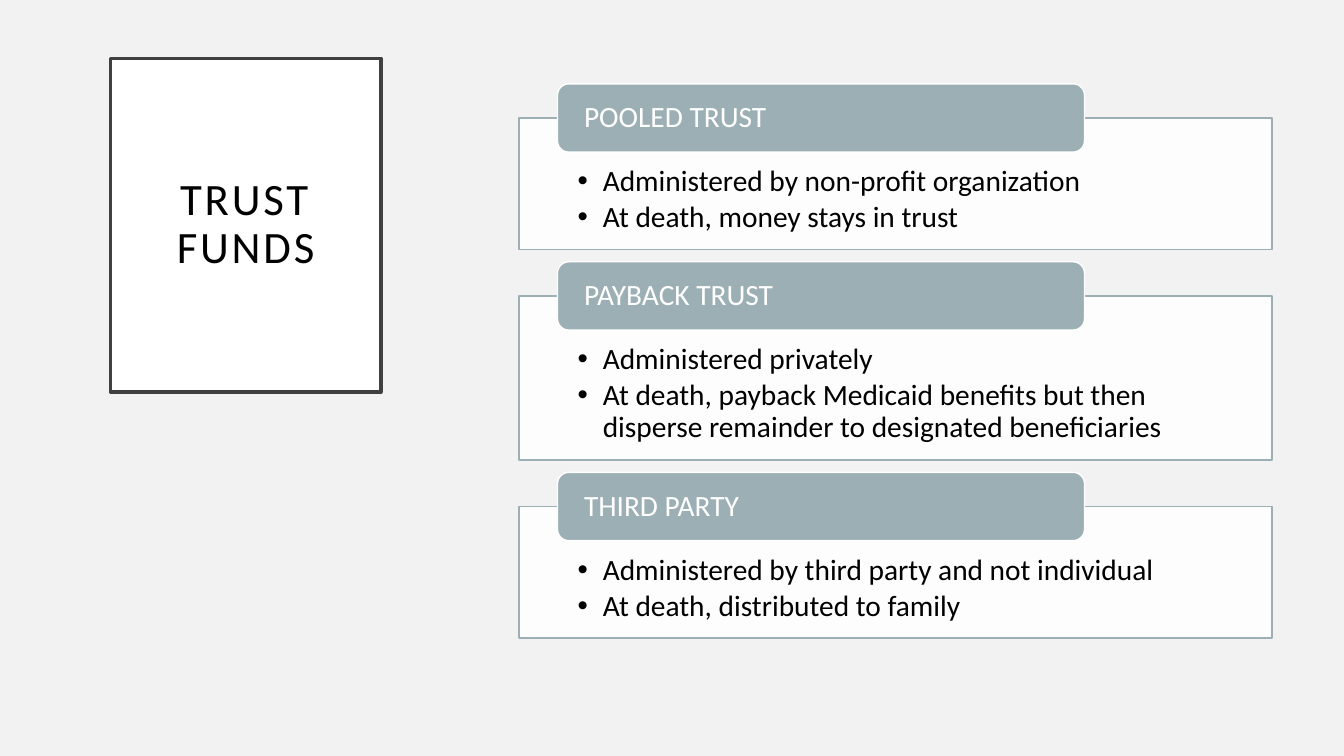
"""Build a slide on three kinds of trust funds, each a tagged panel."""
from lxml.etree import SubElement
from pptx import Presentation
from pptx.dml.color import RGBColor
from pptx.enum.shapes import MSO_SHAPE as SHAPE
from pptx.enum.text import MSO_ANCHOR as ANCHOR, MSO_AUTO_SIZE as AUTO, PP_ALIGN as ALIGN
from pptx.oxml.ns import qn
from pptx.util import Pt


def style(sp, fill, line, width, **frame):
    for fmt, color in ((sp.fill, fill), (sp.line.fill, line)):
        fmt.solid()
        fmt.fore_color.rgb = RGBColor.from_string(color)
    sp.line.width = Pt(width)
    sp.shadow.inherit = False
    for name, value in {"word_wrap": True, "auto_size": AUTO.NONE, **frame}.items():
        setattr(sp.text_frame, name, value)


def write(p, text, size, color, align=ALIGN.LEFT, after=0):
    p.alignment, p.line_spacing = align, 0.9
    p.space_before, p.space_after = Pt(0), Pt(after)
    r = p.add_run()
    r.text = text
    r.font.name, r.font.size = "Calibri", Pt(size)
    r.font.color.rgb = RGBColor.from_string(color)
    return r


prs = Presentation()
prs.slide_width, prs.slide_height = Pt(960), Pt(540)
s = prs.slides.add_slide(prs.slide_layouts[5])
s.background.fill.solid()
s.background.fill.fore_color.rgb = RGBColor.from_string("F2F2F2")

title = s.shapes.title
for name, value in {"left": 79, "top": 41.6, "width": 193, "height": 238.5}.items():
    setattr(title, name, Pt(value))
margins = ("margin_left", "margin_top", "margin_right", "margin_bottom")
style(title, "FFFFFF", "404040", 2.5, vertical_anchor=ANCHOR.MIDDLE,
      **dict.fromkeys(margins, Pt(14.4)))
r = write(title.text_frame.paragraphs[0], "TRUST FUNDS", 32, "000000", ALIGN.CENTER)
r.font._element.set("spc", "200")

trusts = [
    ("POOLED TRUST", 93.9, ["Administered by non-profit organization",
                            "At death, money stays in trust"]),
    ("PAYBACK TRUST", 117.2, ["Administered privately",
                              "At death, payback Medicaid benefits but then "
                              "disperse remainder to designated beneficiaries"]),
    ("THIRD PARTY", 93.9, ["Administered by third party and not individual",
                           "At death, distributed to family"]),
]
left, top, width, gap = 370.8, 84.3, 537.8, 33.2

for name, height, points in trusts:
    panel = s.shapes.add_shape(SHAPE.RECTANGLE, Pt(left), Pt(top), Pt(width), Pt(height))
    style(panel, "FFFFFF", "9BAFB5", 1, vertical_anchor=ANCHOR.TOP,
          **dict(zip(margins, (Pt(41.8), Pt(34.6), Pt(41.8), Pt(11.5)))))
    color = panel.fill._xPr.find(qn("a:solidFill"))[0]
    SubElement(color, qn("a:alpha"), val="90000")
    tf = panel.text_frame
    for i, point in enumerate(points):
        p = tf.add_paragraph() if i else tf.paragraphs[0]
        p.level = 1
        write(p, point, 21, "000000", after=3)
        pPr = p._p.get_or_add_pPr()
        pPr.set("marL", str(Pt(18)))
        pPr.set("indent", str(Pt(-18)))
        SubElement(pPr, qn("a:buFont"), typeface="Arial")
        SubElement(pPr, qn("a:buChar"), char="•")

    tag = s.shapes.add_shape(SHAPE.ROUNDED_RECTANGLE, Pt(left + 27.4), Pt(top - 24.4),
                             Pt(376.5), Pt(48.8))
    style(tag, "9BAFB5", "FFFFFF", 1, vertical_anchor=ANCHOR.MIDDLE,
          **dict(zip(margins, (Pt(16.6), 0, Pt(16.6), 0))))
    write(tag.text_frame.paragraphs[0], name, 21, "FFFFFF")
    top += height + gap

prs.save("out.pptx")
